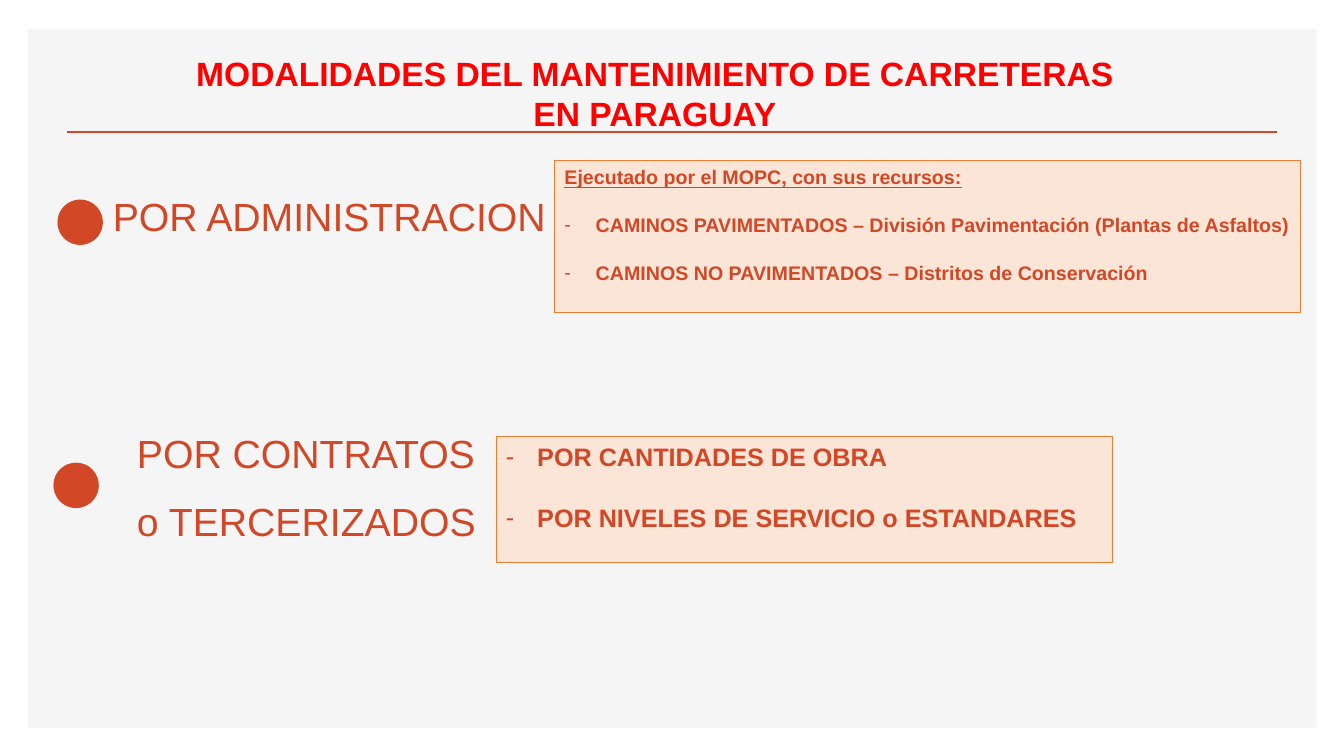
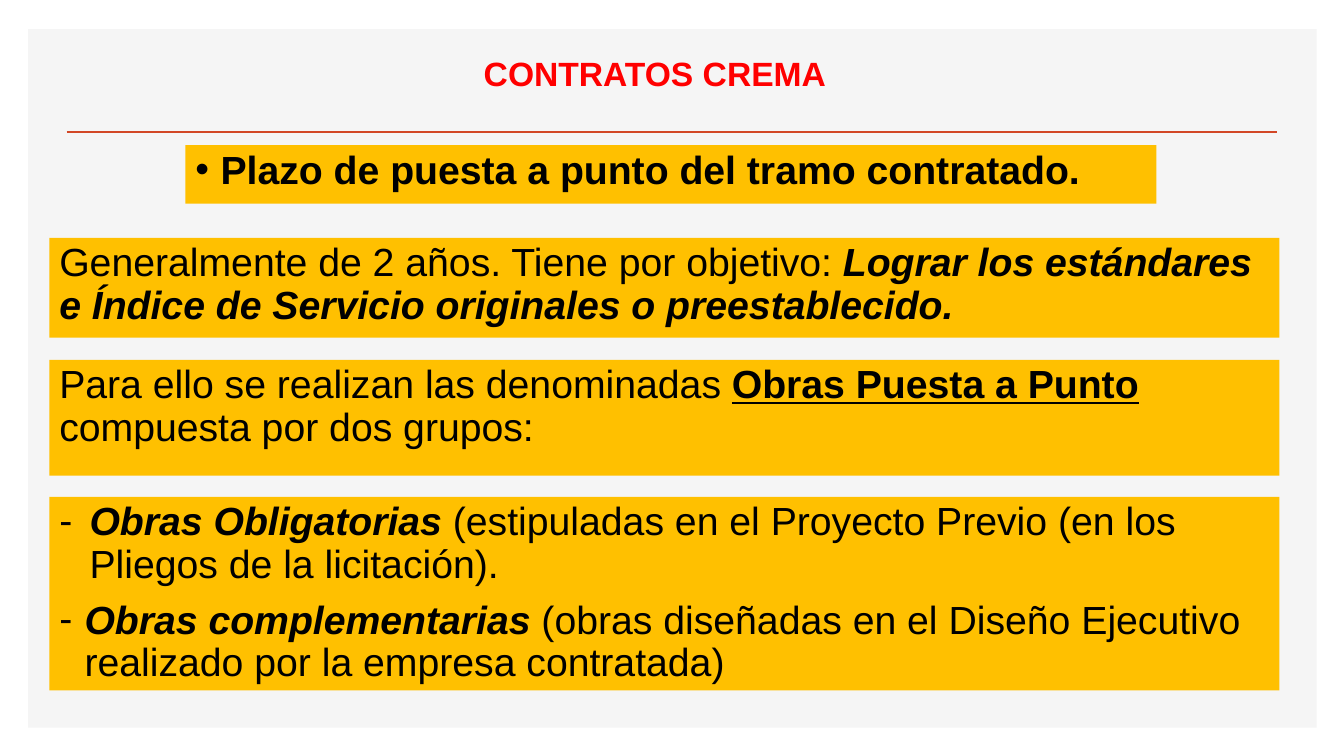
from lxml.etree import SubElement
from pptx import Presentation
from pptx.dml.color import RGBColor
from pptx.enum.shapes import MSO_CONNECTOR, MSO_SHAPE
from pptx.enum.text import MSO_ANCHOR, MSO_AUTO_SIZE, PP_ALIGN
from pptx.oxml.ns import qn
from pptx.util import Inches, Pt

FONT = "Arial"
HUES = {
    "panel": "F5F5F5", "rust": "D24726", "title": "FF0000", "peach": "FBE5D6",
    "edge": "ED7D31", "gold": "FFC000", "black": "000000",
}


def block(slide, kind, box, fill, edge=None):
    """Add a flat filled shape, with a thin edge if one is named."""
    shape = slide.shapes.add_shape(kind, *[Inches(n) for n in box])
    shape.shadow.inherit = False
    shape.fill.solid()
    shape.fill.fore_color.rgb = RGBColor.from_string(HUES[fill])
    if edge:
        shape.line.color.rgb = RGBColor.from_string(HUES[edge])
        shape.line.width = Pt(0.75)
    else:
        shape.line.fill.background()
    return shape


def write(shape, paras, size, hue, align=PP_ALIGN.LEFT, lead=None,
          gap=0, after=0, wrap=True):
    """Fill a shape with paragraphs: (bullet, indent, [(text, style), ...])."""
    frame = shape.text_frame
    frame.word_wrap = wrap
    frame.auto_size = MSO_AUTO_SIZE.NONE
    frame.vertical_anchor = MSO_ANCHOR.TOP
    for n, (mark, dent, runs) in enumerate(paras):
        para = frame.add_paragraph() if n else frame.paragraphs[0]
        para.alignment = align
        para.space_before = Pt(gap if n else 0)
        para.space_after = Pt(after)
        if lead:
            para.line_spacing = lead
        if mark:
            props = para._p.get_or_add_pPr()
            props.set("marL", str(Inches(dent)))
            props.set("indent", str(-Inches(dent)))
            SubElement(props, qn("a:buFont")).set("typeface", FONT)
            SubElement(props, qn("a:buChar")).set("char", mark)
        for text, style in runs:
            run = para.add_run()
            run.text = text
            font = run.font
            font.name, font.size = FONT, Pt(size)
            font.color.rgb = RGBColor.from_string(HUES[hue])
            font.bold, font.italic = "b" in style, "i" in style
            font.underline = "u" in style


deck = Presentation()
deck.slide_width, deck.slide_height = Inches(13.33), Inches(7.5)
plain = deck.slide_layouts[5]

# Titles
heads = [
    ["MODALIDADES DEL MANTENIMIENTO DE CARRETERAS", "EN PARAGUAY"],
    ["CONTRATOS CREMA"],
]
for lines in heads:
    title = deck.slides.add_slide(plain).shapes.title
    title.left, title.top = Inches(1.8), Inches(0.47)
    title.width, title.height = Inches(9.39), Inches(0.91)
    write(title, [(None, 0, [(line, "b")]) for line in lines], 24, "title",
          align=PP_ALIGN.CENTER, wrap=False)
modes, crema = deck.slides

# Shared panel and rule, moved to the layout
tree = plain.placeholders[0].element.getparent()
for spare in list(plain.placeholders)[1:]:
    tree.remove(spare.element)
panel = block(modes, MSO_SHAPE.RECTANGLE, (0.28, 0.29, 12.78, 6.93), "panel")
rule = modes.shapes.add_connector(MSO_CONNECTOR.STRAIGHT, Inches(0.66),
                                  Inches(1.31), Inches(12.67), Inches(1.31))
rule.line.color.rgb = RGBColor.from_string(HUES["rust"])
rule.line.width = Pt(2)
SubElement(rule.element.spPr, qn("a:effectLst"))
tree.insert(2, panel.element)
tree.insert(3, rule.element)

# Slide 1: dots and labels
labels = [
    ((0.57, 1.98), (1.02, 2.08, 4.59, 0.45), ["POR ADMINISTRACION"]),
    ((0.53, 4.59), (1.26, 4.43, 3.89, 1.24), ["POR CONTRATOS", "o TERCERIZADOS"]),
]
for spot, box, lines in labels:
    block(modes, MSO_SHAPE.OVAL, (*spot, 0.45, 0.45), "rust")
    label = modes.shapes.add_textbox(*[Inches(n) for n in box])
    write(label, [(None, 0, [(line, "")]) for line in lines], 28, "rust",
          lead=Pt(18), gap=10, after=20)

# Slide 1: detail boxes
details = [
    ((4.92, 4.33, 6.11, 1.25), 18, 22, [
        ("-", 0.31, [("POR CANTIDADES DE OBRA", "b")]),
        ("-", 0.31, [("POR NIVELES DE SERVICIO o ESTANDARES", "b")]),
    ]),
    ((5.5, 1.59, 7.4, 1.51), 14, 17.5, [
        (None, 0, [("Ejecutado por el MOPC, con sus recursos:", "bu")]),
        ("-", 0.31, [("CAMINOS PAVIMENTADOS – División Pavimentación "
                      "(Plantas de Asfaltos)", "b")]),
        ("-", 0.31, [("CAMINOS NO PAVIMENTADOS – Distritos de Conservación", "b")]),
    ]),
]
for box, size, gap, paras in details:
    shape = block(modes, MSO_SHAPE.RECTANGLE, box, "peach", "edge")
    write(shape, paras, size, "rust", gap=gap)

# Slide 2: gold boxes
bars = [
    ((1.84, 1.44, 9.63, 0.58), [
        ("•", 0.25, [("Plazo de puesta a punto del tramo contratado.", "b")]),
    ]),
    ((0.49, 2.36, 12.2, 0.99), [
        (None, 0, [("Generalmente de 2 años. Tiene por objetivo: ", ""),
                   ("Lograr los estándares e Índice de Servicio originales "
                    "o preestablecido.", "bi")]),
    ]),
    ((0.49, 3.57, 12.2, 1.15), [
        (None, 0, [("Para ello se realizan las denominadas ", ""),
                   ("Obras Puesta a Punto ", "bu"),
                   ("compuesta por dos grupos:", "")]),
    ]),
    ((0.49, 4.93, 12.2, 1.92), [
        ("-", 0.3, [("Obras Obligatorias ", "bi"),
                    ("(estipuladas en el Proyecto Previo (en los Pliegos "
                     "de la licitación).", "")]),
        ("-", 0.25, [("Obras complementarias ", "bi"),
                     ("(obras diseñadas en el Diseño Ejecutivo realizado "
                      "por la empresa contratada)", "")]),
    ]),
]
for box, paras in bars:
    shape = block(crema, MSO_SHAPE.RECTANGLE, box, "gold")
    write(shape, paras, 28, "black", lead=0.9, gap=10)

deck.save("out.pptx")
